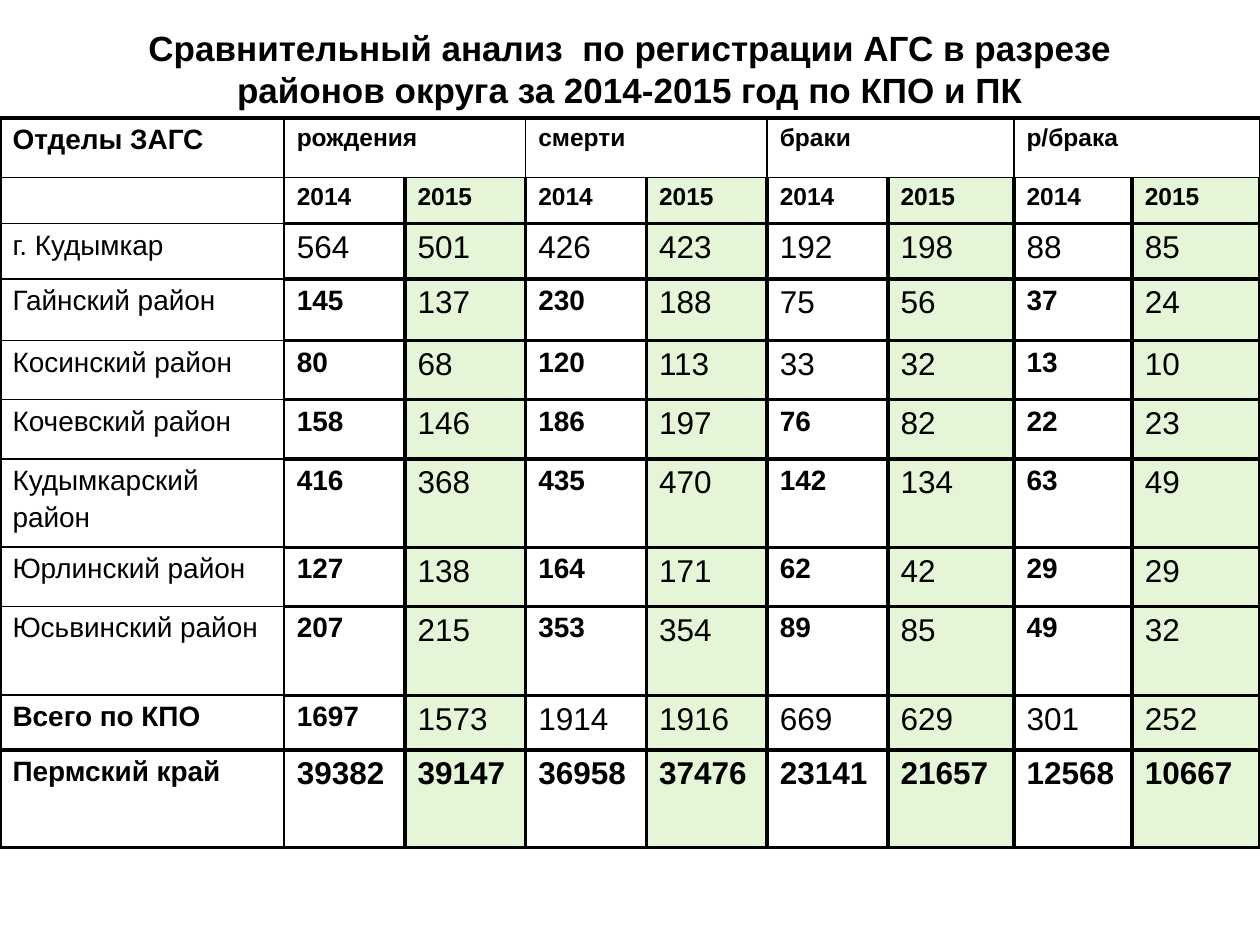
from dataclasses import dataclass

from lxml import etree
from pptx import Presentation
from pptx import util as u
from pptx.dml.color import RGBColor
from pptx.enum import text
from pptx.oxml import ns


@dataclass(frozen=True)
class Theme:
    font: str = "Arial"
    ink: str = "000000"
    accent: str = "E5F6D8"
    title: int = 20
    figure: int = 18
    label: int = 16
    header: int = 14
    thick: float = 2.25
    thin: float = 1


TITLE = ("Сравнительный анализ  по регистрации АГС в разрезе\v"
         "районов округа за 2014-2015 год по КПО и ПК")
CORNER = "Отделы ЗАГС"
EVENTS = ["рождения", "смерти", "браки", "р/брака"]
YEARS = ["2014", "2015"]

ALL_2014 = {1, 3, 5, 7}
# Department, figures by event and year, columns set small and bold
DEPARTMENTS = [
    ("г. Кудымкар", [564, 501, 426, 423, 192, 198, 88, 85], set()),
    ("Гайнский район", [145, 137, 230, 188, 75, 56, 37, 24], {1, 3, 7}),
    ("Косинский район", [80, 68, 120, 113, 33, 32, 13, 10], {1, 3, 7}),
    ("Кочевский район", [158, 146, 186, 197, 76, 82, 22, 23], ALL_2014),
    ("Кудымкарский\nрайон", [416, 368, 435, 470, 142, 134, 63, 49], ALL_2014),
    ("Юрлинский район", [127, 138, 164, 171, 62, 42, 29, 29], ALL_2014),
    ("Юсьвинский район", [207, 215, 353, 354, 89, 85, 49, 32], ALL_2014),
    ("Всего по КПО", [1697, 1573, 1914, 1916, 669, 629, 301, 252], {1}),
    ("Пермский край",
     [39382, 39147, 36958, 37476, 23141, 21657, 12568, 10667], set()),
]

COLUMN_WIDTHS = [162.4, 69, 69, 69, 69, 69, 72, 67.6, 73]
ROW_HEIGHTS = [33.9, 26.5, 31.5, 35.3, 33.8, 33.8, 50.5, 33.8, 50.8, 31.3, 55.7]


def write(frame, content, *, font, size, color, bold=False, align=None, spaced=False):
    """Fill a text frame, one paragraph a line; spaced adds 20 % before each."""
    frame.word_wrap = True
    for index, line in enumerate(content.split("\n")):
        paragraph = frame.paragraphs[0] if index == 0 else frame.add_paragraph()
        paragraph.text = line
        paragraph.alignment = align
        if spaced:
            before = etree.SubElement(paragraph._p.get_or_add_pPr(), ns.qn("a:spcBef"))
            etree.SubElement(before, ns.qn("a:spcPct"), val="20000")
        for run in paragraph.runs:
            run.font.name = font
            run.font.size = u.Pt(size)
            run.font.bold = bold
            run.font.color.rgb = RGBColor.from_string(color)
        if not line:
            paragraph._p.get_or_add_endParaRPr().set("sz", str(size * 100))


class SlideBuilder:
    def __init__(self, slide, theme):
        self.slide = slide
        self.theme = theme

    def title(self, content, left, top, width, height):
        box = self.slide.shapes.add_textbox(*map(u.Pt, (left, top, width, height)))
        box.text_frame.vertical_anchor = text.MSO_ANCHOR.MIDDLE
        write(box.text_frame, content, font=self.theme.font, size=self.theme.title,
              color=self.theme.ink, bold=True, align=text.PP_ALIGN.CENTER)

    def table(self, left, top, widths, heights):
        frame = self.slide.shapes.add_table(
            len(heights), len(widths),
            *map(u.Pt, (left, top, sum(widths), sum(heights))))
        table = frame.table
        table.first_row = table.horz_banding = False
        for column, width in zip(table.columns, widths):
            column.width = u.Pt(width)
        for row, height in zip(table.rows, heights):
            row.height = u.Pt(height)
        return table

    def cell(self, cell, content, size, bold, shaded):
        write(cell.text_frame, content, font=self.theme.font, size=size,
              color=self.theme.ink, bold=bold, spaced=size != self.theme.figure)
        if shaded:
            cell.fill.solid()
            cell.fill.fore_color.rgb = RGBColor.from_string(self.theme.accent)
        else:
            cell.fill.background()

    def borders(self, cell, row, column):
        """Thin lines round the headings and department names, thick elsewhere."""
        def vertical(edge):
            thin = edge == 1 or (row == 0 and 0 < edge < len(COLUMN_WIDTHS))
            return self.theme.thin if thin else self.theme.thick

        def horizontal(edge):
            thin = edge == 1 or (column == 0 and 0 < edge < len(ROW_HEIGHTS) - 1)
            return self.theme.thin if thin else self.theme.thick

        sides = {"L": vertical(column), "R": vertical(column + 1),
                 "T": horizontal(row), "B": horizontal(row + 1)}
        properties = cell._tc.get_or_add_tcPr()
        for side, width in sides.items():
            line = etree.SubElement(properties, ns.qn(f"a:ln{side}"), w=str(u.Pt(width)))
            fill = etree.SubElement(line, ns.qn("a:solidFill"))
            etree.SubElement(fill, ns.qn("a:srgbClr"), val=self.theme.ink)


def table_rows(theme):
    """Yield each row as (text, size, bold) cells."""
    yield [(CORNER, theme.label, True)] + [
        (event if year == YEARS[0] else "", theme.header, True)
        for event in EVENTS for year in YEARS]
    yield [("", theme.header, True)] + [
        (year, theme.header, True) for year in YEARS * len(EVENTS)]
    for index, (name, figures, small) in enumerate(DEPARTMENTS):
        is_total = index >= len(DEPARTMENTS) - 2
        is_region = index == len(DEPARTMENTS) - 1
        yield [(name, theme.label, is_total)] + [
            (str(figure), theme.label if column in small else theme.figure,
             is_region or column in small)
            for column, figure in enumerate(figures, start=1)]


def main():
    presentation = Presentation()
    presentation.slide_width, presentation.slide_height = u.Pt(720), u.Pt(540)
    slide = presentation.slides.add_slide(presentation.slide_layouts[6])
    theme = Theme()
    builder = SlideBuilder(slide, theme)

    builder.title(TITLE, 36, 0, 648, 78.5)
    table = builder.table(0, 67.5, COLUMN_WIDTHS, ROW_HEIGHTS)
    for row, cells in enumerate(table_rows(theme)):
        for column, (content, size, bold) in enumerate(cells):
            cell = table.cell(row, column)
            builder.borders(cell, row, column)
            is_2015 = column > 0 and column % 2 == 0
            builder.cell(cell, content, size, bold, shaded=row > 0 and is_2015)
    for column in range(1, len(COLUMN_WIDTHS), len(YEARS)):
        table.cell(0, column).merge(table.cell(0, column + 1))

    presentation.save("out.pptx")


if __name__ == "__main__":
    main()
